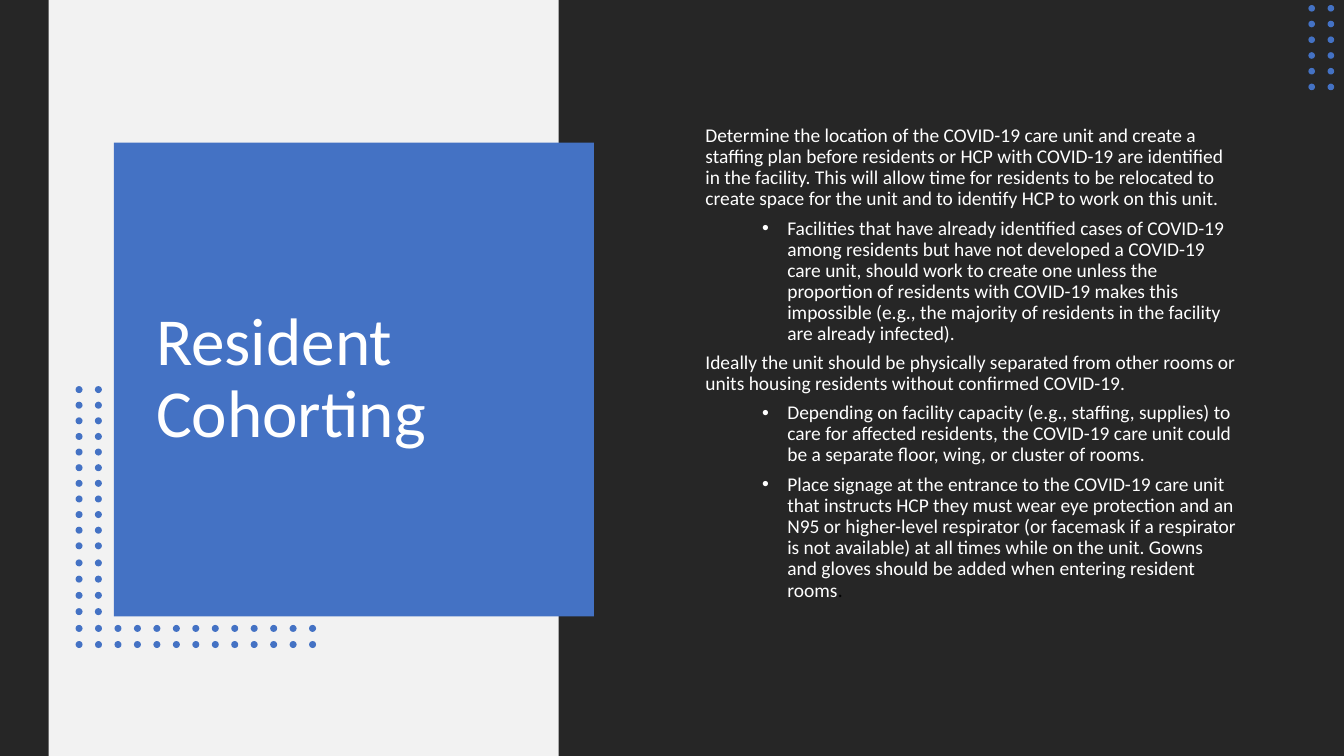
from lxml.etree import SubElement
from pptx import Presentation
from pptx.dml.color import RGBColor
from pptx.enum.shapes import MSO_SHAPE
from pptx.enum.text import MSO_ANCHOR
from pptx.oxml.ns import qn
from pptx.util import Pt

CHARCOAL = RGBColor(0x26, 0x26, 0x26)
PALE = RGBColor(0xF2, 0xF2, 0xF2)
BLUE = RGBColor(0x44, 0x72, 0xC4)
WHITE = RGBColor(0xFF, 0xFF, 0xFF)
BLACK = RGBColor(0x00, 0x00, 0x00)

GUIDANCE = [
    (0, "Determine the location of the COVID-19 care unit and create a staffing plan before residents "
        "or HCP with COVID-19 are identified in the facility. This will allow time for residents to be "
        "relocated to create space for the unit and to identify HCP to work on this unit."),
    (1, "Facilities that have already identified cases of COVID-19 among residents but have not "
        "developed a COVID-19 care unit, should work to create one unless the proportion of residents "
        "with COVID-19 makes this impossible (e.g., the majority of residents in the facility are "
        "already infected)."),
    (0, "Ideally the unit should be physically separated from other rooms or units housing residents "
        "without confirmed COVID-19."),
    (1, "Depending on facility capacity (e.g., staffing, supplies) to care for affected residents, the "
        "COVID-19 care unit could be a separate floor, wing, or cluster of rooms."),
    (1, "Place signage at the entrance to the COVID-19 care unit that instructs HCP they must wear eye "
        "protection and an N95 or higher-level respirator (or facemask if a respirator is not "
        "available) at all times while on the unit. Gowns and gloves should be added when entering "
        "resident rooms"),
]


class SlideBuilder:
    font = "Calibri"
    line_spacing = 0.9

    def __init__(self, page):
        self.page = page

    def shape(self, kind, left, top, width, height, color, shapes=None):
        shapes = self.page.shapes if shapes is None else shapes
        box = shapes.add_shape(kind, Pt(left), Pt(top), Pt(width), Pt(height))
        box.shadow.inherit = False
        box.fill.solid()
        box.fill.fore_color.rgb = color
        box.line.fill.background()

    def dots(self, size, *grids):
        group = self.page.shapes.add_group_shape()
        for left, top, columns, rows, across, down in grids:
            for row in range(rows):
                for column in range(columns):
                    self.shape(MSO_SHAPE.OVAL, left + column * across, top + row * down,
                               size, size, BLUE, group.shapes)

    def text_frame(self, left, top, width, height):
        box = self.page.shapes.add_textbox(Pt(left), Pt(top), Pt(width), Pt(height))
        frame = box.text_frame
        frame.word_wrap = True
        frame.vertical_anchor = MSO_ANCHOR.MIDDLE
        return frame

    def span(self, para, text, size, color=WHITE):
        span = para.add_run()
        span.text = text
        span.font.name = self.font
        span.font.size = Pt(size)
        span.font.color.rgb = color

    def bullet(self, para):
        properties = para._p.get_or_add_pPr()
        properties.set("marL", str(Pt(58.5)))
        properties.set("indent", str(-Pt(18)))
        SubElement(properties, qn("a:buFont")).set("typeface", "Arial")
        SubElement(properties, qn("a:buChar")).set("char", "•")

    def title(self, text, left, top, width, height):
        para = self.text_frame(left, top, width, height).paragraphs[0]
        para.line_spacing = self.line_spacing
        self.span(para, text, 48)

    def body(self, items, left, top, width, height):
        frame = self.text_frame(left, top, width, height)
        for index, (level, text) in enumerate(items):
            para = frame.add_paragraph() if index else frame.paragraphs[0]
            para.level = level
            para.line_spacing = self.line_spacing
            para.space_after = Pt(6)
            if level:
                self.bullet(para)
            self.span(para, text, 13.9)
        self.span(para, ".", 14.8, BLACK)


def main():
    deck = Presentation()
    deck.slide_width, deck.slide_height = Pt(960), Pt(540)
    builder = SlideBuilder(deck.slides.add_slide(deck.slide_layouts[6]))

    builder.shape(MSO_SHAPE.RECTANGLE, 0, 0, 960, 540, CHARCOAL)
    builder.shape(MSO_SHAPE.RECTANGLE, 34.8, 0, 364.2, 540, PALE)
    builder.shape(MSO_SHAPE.RECTANGLE, 81.4, 102, 342.8, 338.4, BLUE)
    builder.title("Resident Cohorting", 104.4, 125.3, 295.2, 291.6)

    builder.dots(4.7, (934.6, 3.6, 2, 6, 13.7, 11.23))
    builder.dots(
        5,
        (54, 275.8, 2, 11, 13.8, 11.16),
        (54, 399.6, 2, 4, 13.8, 11.6),
        (54, 446.4, 13, 2, 13.9, 11.5),
    )
    builder.body(GUIDANCE, 496.8, 91.4, 393.8, 337)
    deck.save("out.pptx")


if __name__ == "__main__":
    main()
